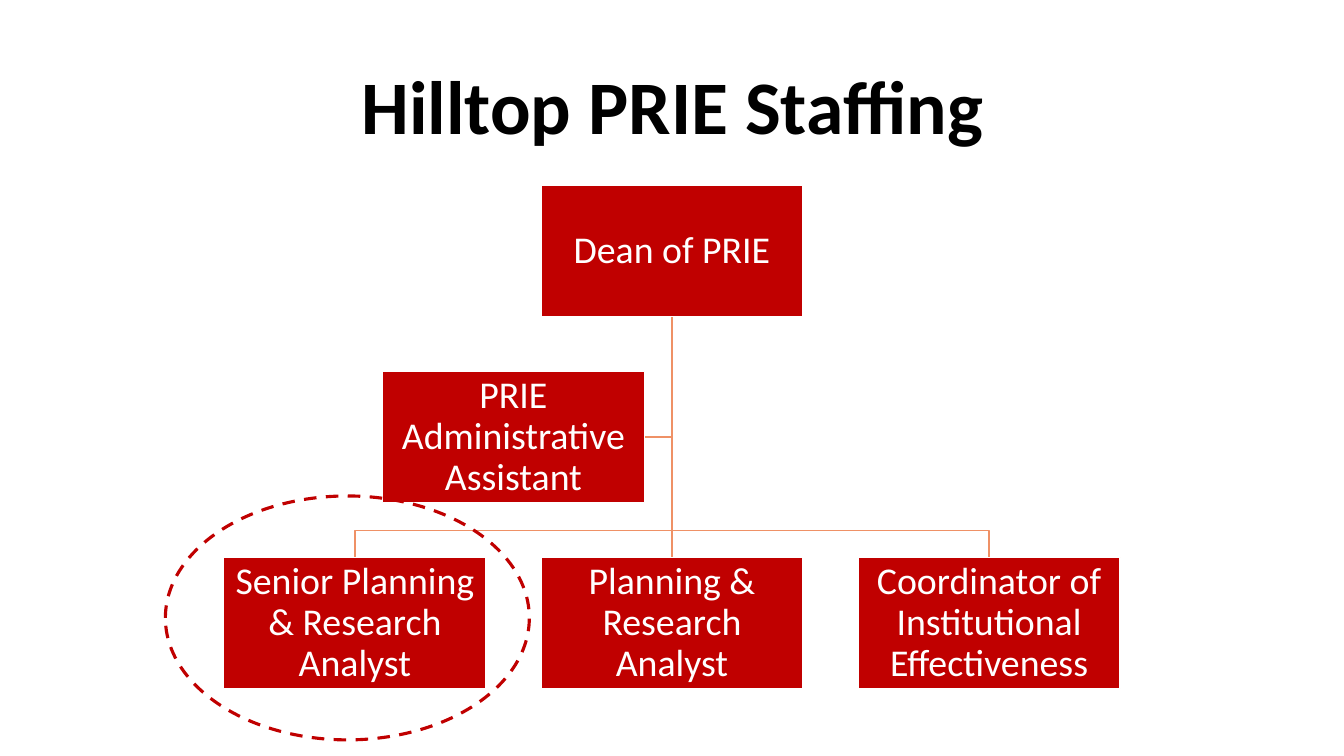
from pptx import Presentation
from pptx.dml.color import RGBColor
from pptx.enum.dml import MSO_LINE
from pptx.enum.shapes import MSO_CONNECTOR, MSO_SHAPE
from pptx.enum.text import MSO_ANCHOR, PP_ALIGN
from pptx.oxml.ns import qn
from pptx.util import Inches, Pt
from lxml import etree

RECTANGLE, ELLIPSE = MSO_SHAPE.RECTANGLE, MSO_SHAPE.OVAL
STRAIGHT, DASH = MSO_CONNECTOR.STRAIGHT, MSO_LINE.DASH
MIDDLE, CENTER = MSO_ANCHOR.MIDDLE, PP_ALIGN.CENTER

COLORS = {"red": "C00000", "link": "EF9166", "white": "FFFFFF", "black": "000000"}
FONT = "Calibri"

# Chart grid in inches: columns count from the middle, rows from the top
PAGE_WIDTH, PAGE_HEIGHT = 13.33, 7.5
MIDDLE_X, COLUMN_STEP = PAGE_WIDTH / 2, 3.145
FIRST_TOP, ROW_STEP = 1.84, 1.845
BOX_WIDTH, BOX_HEIGHT = 2.6, 1.3
BUS_GAP = 0.27

# Role, column, row
STAFF = [
    ("Dean of PRIE", 0, 0),
    ("Senior Planning & Research Analyst", -1, 2),
    ("Planning & Research Analyst", 0, 2),
    ("Coordinator of Institutional Effectiveness", 1, 2),
    ("PRIE Administrative Assistant", -0.5, 1),
]


def color(name):
    return RGBColor.from_string(COLORS[name])


def column_x(column):
    return MIDDLE_X + column * COLUMN_STEP


def row_y(row):
    return FIRST_TOP + row * ROW_STEP


def set_line(shape, name, width):
    shape.line.color.rgb = color(name)
    shape.line.width = Pt(width)


def write(shape, text, size, name, inset, bold=False):
    frame = shape.text_frame
    frame.text = text
    frame.word_wrap = True
    frame.vertical_anchor = MIDDLE
    frame.margin_left = frame.margin_right = Inches(inset)
    frame.margin_top = frame.margin_bottom = Inches(inset)
    para = frame.paragraphs[0]
    para.alignment = CENTER
    para.line_spacing = 0.9
    font = para.runs[0].font
    font.name, font.size, font.bold = FONT, Pt(size), bold
    font.color.rgb = color(name)


def add_title(page, text):
    box = page.shapes.add_textbox(Inches(0.92), Inches(0.37), Inches(11.5), Inches(1.45))
    write(box, text, 54, "black", 0.05, bold=True)


def add_role(page, role, column, row):
    box = page.shapes.add_shape(
        RECTANGLE, Inches(column_x(column) - BOX_WIDTH / 2), Inches(row_y(row)),
        Inches(BOX_WIDTH), Inches(BOX_HEIGHT))
    box.shadow.inherit = False
    box.fill.solid()
    box.fill.fore_color.rgb = color("red")
    set_line(box, "white", 1)
    write(box, role, 27, "white", 0.02)


def add_elbow(page, points):
    corners = [(Inches(x), Inches(y)) for x, y in points]
    builder = page.shapes.build_freeform(*corners[0])
    builder.add_line_segments(corners[1:], close=False)
    elbow = builder.convert_to_shape()
    elbow.shadow.inherit = False
    elbow.fill.background()
    set_line(elbow, "link", 1)


def add_straight(page, x, top, bottom):
    link = page.shapes.add_connector(STRAIGHT, Inches(x), Inches(top), Inches(x), Inches(bottom))
    set_line(link, "link", 1)
    etree.SubElement(link._element.spPr, qn("a:effectLst"))


def add_links(page):
    start, end = row_y(0) + BOX_HEIGHT, row_y(2)
    bus = end - BUS_GAP
    assistant_y = row_y(1) + BOX_HEIGHT / 2
    assistant_right = column_x(-0.5) + BOX_WIDTH / 2
    add_elbow(page, [(MIDDLE_X, start), (MIDDLE_X, assistant_y), (assistant_right, assistant_y)])
    for column in (1, -1):
        x = column_x(column)
        add_elbow(page, [(MIDDLE_X, start), (MIDDLE_X, bus), (x, bus), (x, end)])
    add_straight(page, MIDDLE_X, start, end)


def add_highlight(page):
    ring = page.shapes.add_shape(ELLIPSE, Inches(1.64), Inches(4.92), Inches(3.61), Inches(2.42))
    ring.shadow.inherit = False
    ring.fill.background()
    set_line(ring, "red", 2.25)
    ring.line.dash_style = DASH


def main():
    deck = Presentation()
    deck.slide_width, deck.slide_height = Inches(PAGE_WIDTH), Inches(PAGE_HEIGHT)
    page = deck.slides.add_slide(deck.slide_layouts[6])

    add_title(page, "Hilltop PRIE Staffing")
    # Links lie behind the boxes
    add_links(page)
    for role, column, row in STAFF:
        add_role(page, role, column, row)
    add_highlight(page)

    deck.save("out.pptx")


if __name__ == "__main__":
    main()
